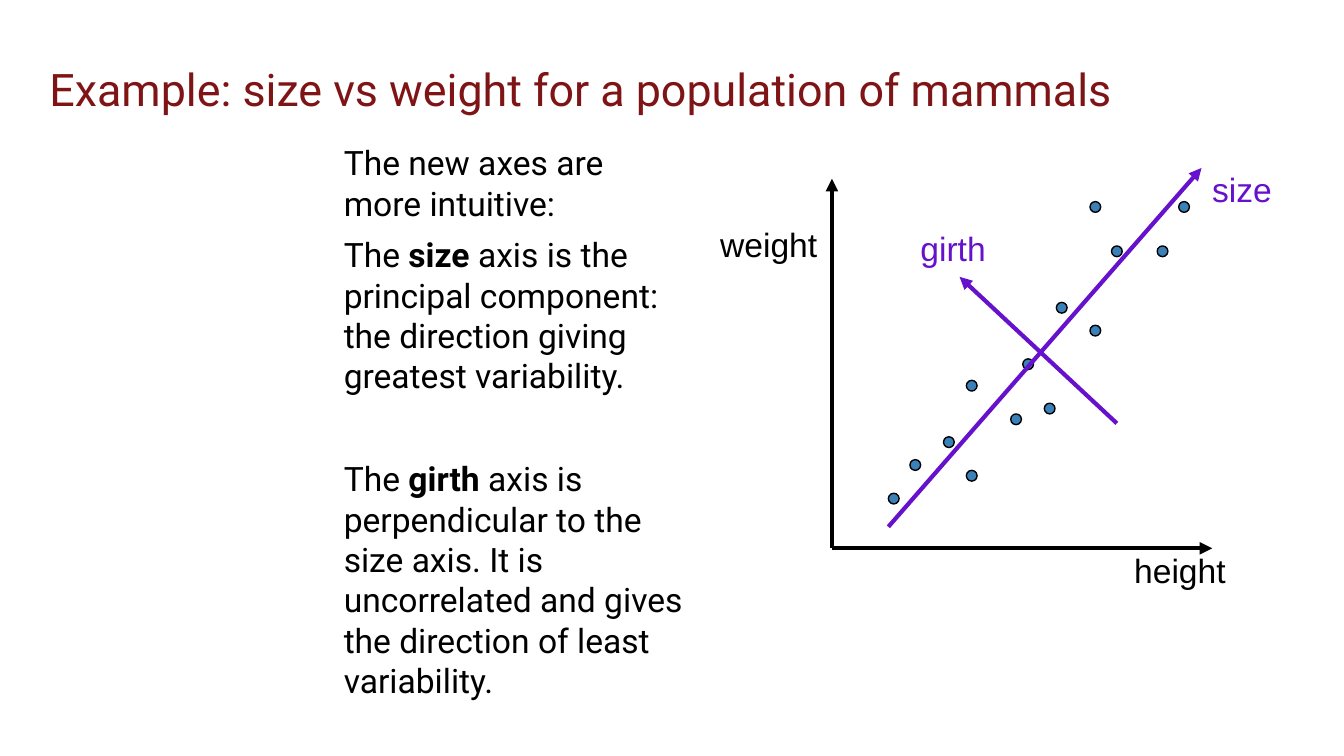
from lxml import etree
from pptx import Presentation
from pptx.dml.color import RGBColor
from pptx.enum import shapes, text
from pptx.oxml.ns import qn
from pptx.util import Inches, Pt

COLORS = {"title": "7F1416", "ink": "000000", "dot": "3A81BA", "axis": "6611CC"}

# Dot centres, in inches right of and above the origin of the plot
DOTS = [(1.46, 1.37), (0.87, 0.79), (2.46, 2.21), (0.62, 0.62), (1.04, 0.54),
        (1.96, 1.62), (1.37, 0.96), (1.04, 1.21), (1.71, 1.79), (2.12, 2.21),
        (1.96, 2.54), (0.46, 0.37), (1.62, 1.04), (2.62, 2.54)]
DOT_SIZE = 0.08


def color(name):
    return RGBColor.from_string(COLORS[name])


def style(par, size, face, ink):
    par.font.size = Pt(size)
    par.font.name = face
    par.font.color.rgb = color(ink)


def add_box(slide, box, inset=0.1):
    """Add a wrapping text box and return its frame."""
    frame = slide.shapes.add_textbox(*map(Inches, box)).text_frame
    frame.word_wrap = True
    frame.margin_left = frame.margin_right = Inches(0.1)
    frame.margin_top = frame.margin_bottom = Inches(inset)
    return frame


def add_title(slide, box):
    frame = add_box(slide, box)
    frame.vertical_anchor = text.MSO_ANCHOR.BOTTOM
    par = frame.paragraphs[0]
    par.text = "Example: size vs weight for a population of mammals"
    style(par, 24, "Roboto", "title")


def add_body(slide, box):
    frame = add_box(slide, box)
    # Space before, then pieces of text; every second piece is bold
    notes = [
        (0, ["The new axes are more intuitive:"]),
        (6, ["The ", "size ", "axis is the principal component: "
             "the direction giving greatest variability."]),
        (33.6, ["The ", "girth ", "axis is perpendicular to the size axis. It is "
                "uncorrelated and gives the direction of least variability."]),
    ]
    for i, (gap, parts) in enumerate(notes):
        par = frame.add_paragraph() if i else frame.paragraphs[0]
        par.space_before = Pt(gap)
        style(par, 18, "Roboto", "ink")
        for j, part in enumerate(parts):
            run = par.add_run()
            run.text = part
            if j % 2:
                run.font.bold = True


def add_arrow(slide, start, end, ink):
    line = slide.shapes.add_connector(
        shapes.MSO_CONNECTOR.STRAIGHT, *map(Inches, (*start, *end)))
    line.line.color.rgb = color(ink)
    line.line.width = Pt(2.25)
    props = line._element.spPr
    etree.SubElement(props.find(qn("a:ln")), qn("a:tailEnd"), type="triangle")
    etree.SubElement(props, qn("a:effectLst"))


def add_label(slide, words, box, ink):
    frame = add_box(slide, box, 0.05)
    frame.word_wrap = False
    frame.auto_size = text.MSO_AUTO_SIZE.SHAPE_TO_FIT_TEXT
    par = frame.paragraphs[0]
    par.text = words
    style(par, 18, "Arial", ink)


def add_dot(slide, x, y):
    """Add a dot centred on x, y."""
    half = DOT_SIZE / 2
    dot = slide.shapes.add_shape(
        shapes.MSO_SHAPE.OVAL,
        *map(Inches, (x - half, y - half, DOT_SIZE, DOT_SIZE)))
    dot.shadow.inherit = False
    dot.fill.solid()
    dot.fill.fore_color.rgb = color("dot")
    dot.line.color.rgb = color("ink")
    dot.line.width = Pt(0.75)


def add_plot(slide, box):
    """Draw the scatter plot; the box spans its two black axes."""
    left, top, width, height = box
    base = top + height

    def place(x, y):
        return left + x, base - y

    add_arrow(slide, place(0, 0), place(0, height), "ink")
    add_arrow(slide, place(0, 0), place(width, 0), "ink")
    add_label(slide, "height", (*place(2.15, 0.04), 0.88, 0.4), "ink")
    add_label(slide, "weight", (*place(-0.93, 2.46), 0.92, 0.4), "ink")
    for dot in DOTS:
        add_dot(slide, *place(*dot))
    add_arrow(slide, place(0.42, 0.16), place(2.75, 2.83), "axis")
    add_arrow(slide, place(2.12, 0.93), place(0.95, 2.02), "axis")
    add_label(slide, "size", (*place(2.73, 2.87), 0.65, 0.4), "axis")
    add_label(slide, "girth", (*place(0.56, 2.43), 0.69, 0.4), "axis")


def main():
    deck = Presentation()
    deck.slide_width = Inches(10)
    deck.slide_height = deck.slide_width * 9 // 16
    slide = deck.slides.add_slide(deck.slide_layouts[6])
    add_title(slide, (0.27, 0.07, 9.44, 0.89))
    add_body(slide, (2.46, 0.96, 2.73, 4.5))
    add_plot(slide, (6.19, 1.33, 2.83, 2.75))
    deck.save("out.pptx")


if __name__ == "__main__":
    main()
